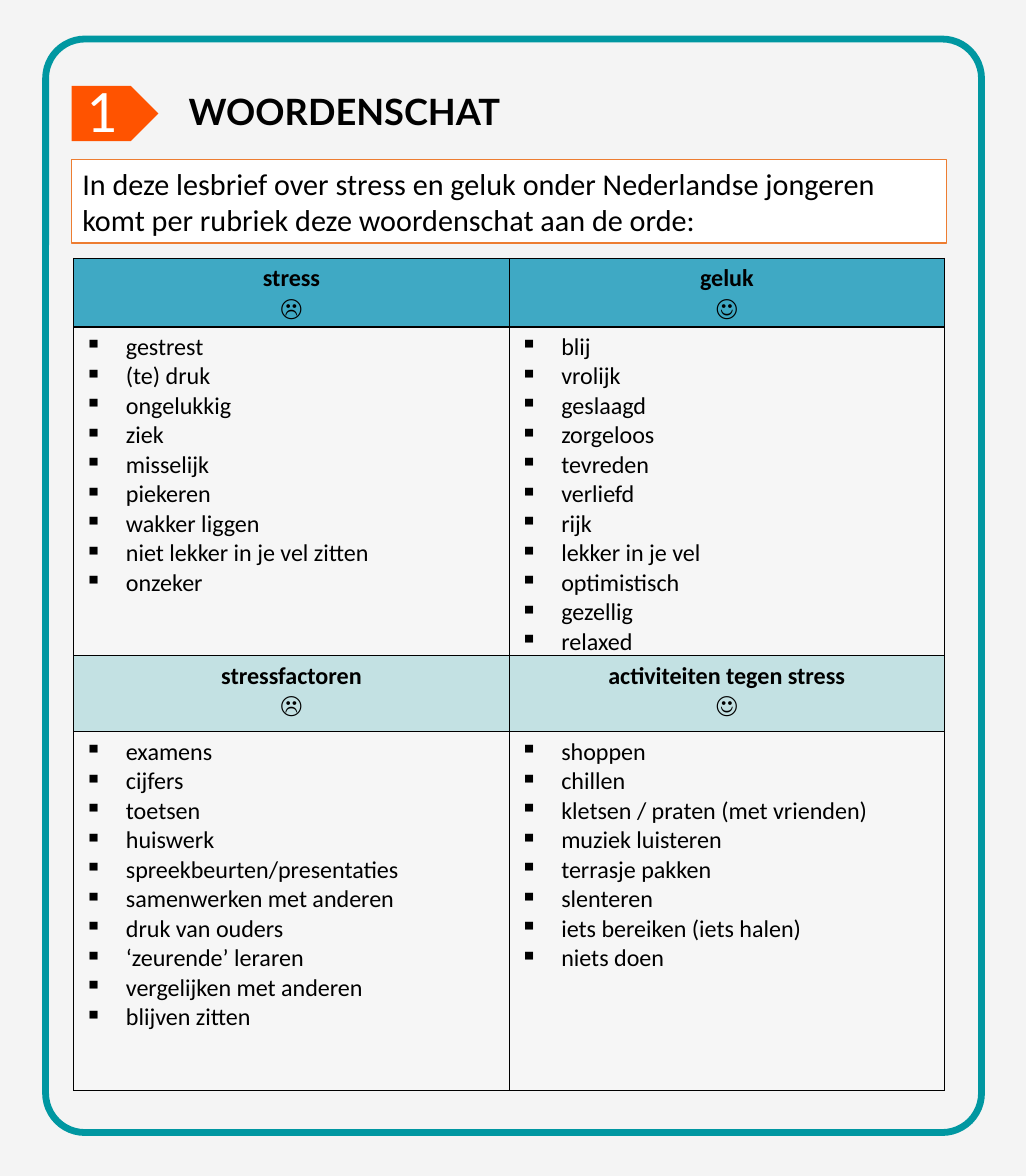
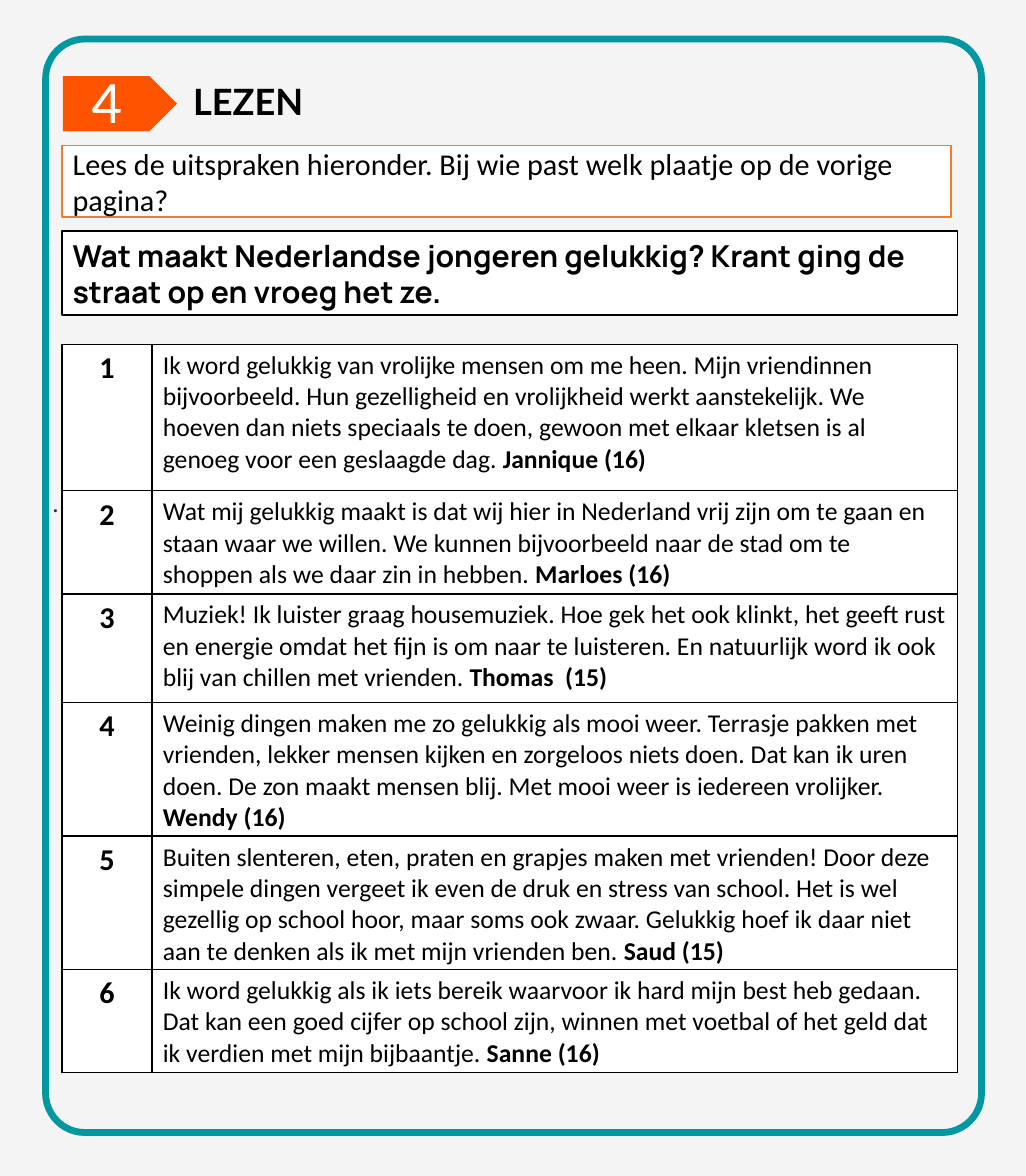
from lxml import etree
from pptx import Presentation
from pptx.dml.color import RGBColor
from pptx.enum import shapes, text
from pptx.oxml import ns
from pptx.util import Inches, Pt

BACKGROUND = RGBColor(0xF4, 0xF4, 0xF4)
TEAL = RGBColor(0x00, 0x97, 0xA1)
BLUE = RGBColor(0x3F, 0xA9, 0xC4)
ORANGE = RGBColor(0xFF, 0x53, 0x00)
OUTLINE = RGBColor(0xED, 0x7D, 0x31)
WHITE = RGBColor(0xFF, 0xFF, 0xFF)
BLACK = RGBColor(0, 0, 0)
DARK = RGBColor(0x28, 0x28, 0x28)

BODY_FONT, TITLE_FONT, QUOTE_FONT, DOT_FONT = "Calibri", "Lato", "Manrope", "Karla"

SAD, HAPPY = "☹", "☺"
VOCABULARY = [
    ("stress", SAD, [
        "gestrest", "(te) druk", "ongelukkig", "ziek", "misselijk", "piekeren",
        "wakker liggen", "niet lekker in je vel zitten", "onzeker"]),
    ("geluk", HAPPY, [
        "blij", "vrolijk", "geslaagd", "zorgeloos", "tevreden", "verliefd", "rijk",
        "lekker in je vel", "optimistisch", "gezellig", "relaxed"]),
    ("stressfactoren", SAD, [
        "examens", "cijfers", "toetsen", "huiswerk", "spreekbeurten/presentaties",
        "samenwerken met anderen", "druk van ouders", "‘zeurende’ leraren",
        "vergelijken met anderen", "blijven zitten"]),
    ("activiteiten tegen stress", HAPPY, [
        "shoppen", "chillen", "kletsen / praten (met vrienden)", "muziek luisteren",
        "terrasje pakken", "slenteren", "iets bereiken (iets halen)", "niets doen"]),
]

STATEMENTS = [
    ("Ik word gelukkig van vrolijke mensen om me heen. Mijn vriendinnen bijvoorbeeld. "
     "Hun gezelligheid en vrolijkheid werkt aanstekelijk. We hoeven dan niets speciaals "
     "te doen, gewoon met elkaar kletsen is al genoeg voor een geslaagde dag. ",
     "Jannique (16)"),
    ("Wat mij gelukkig maakt is dat wij hier in Nederland vrij zijn om te gaan en staan "
     "waar we willen. We kunnen bijvoorbeeld naar de stad om te shoppen als we daar zin "
     "in hebben. ", "Marloes (16)"),
    ("Muziek! Ik luister graag housemuziek. Hoe gek het ook klinkt, het geeft rust en "
     "energie omdat het fijn is om naar te luisteren. En natuurlijk word ik ook blij van "
     "chillen met vrienden. ", "Thomas  (15)"),
    ("Weinig dingen maken me zo gelukkig als mooi weer. Terrasje pakken met vrienden, "
     "lekker mensen kijken en zorgeloos niets doen. Dat kan ik uren doen. De zon maakt "
     "mensen blij. Met mooi weer is iedereen vrolijker. ", "Wendy (16)"),
    ("Buiten slenteren, eten, praten en grapjes maken met vrienden! Door deze simpele "
     "dingen vergeet ik even de druk en stress van school. Het is wel gezellig op school "
     "hoor, maar soms ook zwaar. Gelukkig hoef ik daar niet aan te denken als ik met mijn "
     "vrienden ben. ", "Saud (15)"),
    ("Ik word gelukkig als ik iets bereik waarvoor ik hard mijn best heb gedaan. Dat kan "
     "een goed cijfer op school zijn, winnen met voetbal of het geld dat ik verdien met "
     "mijn bijbaantje. ", "Sanne (16)"),
]


def inches(box):
    return [Inches(length) for length in box]


def style(paragraph, size, color=BLACK, font=BODY_FONT, bold=False):
    paragraph.font.size = Pt(size)
    paragraph.font.color.rgb = color
    paragraph.font.name = font
    paragraph.font.bold = bold


def add_label(slide, box, words, size, **look):
    frame = slide.shapes.add_textbox(*inches(box)).text_frame
    frame.word_wrap = True
    paragraph = frame.paragraphs[0]
    paragraph.text = words
    style(paragraph, size, **look)
    return paragraph


def add_block(slide, kind, box, fill=None, line=None, width=1):
    block = slide.shapes.add_shape(kind, *inches(box))
    block.shadow.inherit = False
    if fill is None:
        block.fill.background()
    else:
        block.fill.solid()
        block.fill.fore_color.rgb = fill
    if line is None:
        block.line.fill.background()
    else:
        block.line.color.rgb = line
        block.line.width = Pt(width)
    return block


def add_page(deck):
    slide = deck.slides.add_slide(deck.slide_layouts[6])
    slide.background.fill.solid()
    slide.background.fill.fore_color.rgb = BACKGROUND
    border = add_block(slide, shapes.MSO_SHAPE.ROUNDED_RECTANGLE,
                       (0.42, 0.36, 8.62, 10.07), line=TEAL, width=4.5)
    border.adjustments[0] = 0.042
    return slide


def add_heading(slide, left, top, badge_width, number_inset, title_left, number, title):
    add_block(slide, shapes.MSO_SHAPE.PENTAGON, (left, top, badge_width, 0.51), ORANGE)
    add_label(slide, (left + number_inset, top - 0.17, 0.52, 0.77), number, 40, color=WHITE)
    add_label(slide, (title_left, top - 0.02, 7.2, 0.5), title, 24,
              font=TITLE_FONT, bold=True)


def add_note(slide, box, words, line=OUTLINE, **look):
    note = add_block(slide, shapes.MSO_SHAPE.RECTANGLE, box, WHITE, line)
    frame = note.text_frame
    frame.word_wrap = True
    frame.vertical_anchor = text.MSO_ANCHOR.MIDDLE
    paragraph = frame.paragraphs[0]
    paragraph.text = words
    paragraph.alignment = text.PP_ALIGN.LEFT
    style(paragraph, 20, **look)


def add_grid(slide, left, top, columns, rows):
    table = slide.shapes.add_table(
        len(rows), len(columns), *inches((left, top, sum(columns), sum(rows)))).table
    table.first_row = table.horz_banding = False
    for column, width in zip(table.columns, columns):
        column.width = Inches(width)
    for row, height in zip(table.rows, rows):
        row.height = Inches(height)
    return table


def format_cell(cell, fill, opacity=100, bottom_margin=0.0, **borders):
    cell.margin_top = Inches(0.05)
    cell.margin_bottom = Inches(bottom_margin)
    cell.fill.solid()
    cell.fill.fore_color.rgb = fill
    properties = cell._tc.get_or_add_tcPr()
    if opacity < 100:
        color = properties.find(".//" + ns.qn("a:srgbClr"))
        etree.SubElement(color, ns.qn("a:alpha"), val=str(opacity * 1000))
    for position, side in enumerate("LRTB"):
        edge = etree.Element(ns.qn("a:ln" + side), w=str(Pt(borders.get(side, 1))))
        paint = etree.SubElement(edge, ns.qn("a:solidFill"))
        etree.SubElement(paint, ns.qn("a:srgbClr"), val=str(BLACK))
        properties.insert(position, edge)


def fill_cell(cell, lines, size, bold=False, centered=False, bullet=None):
    frame = cell.text_frame
    for index, words in enumerate(lines):
        paragraph = frame.add_paragraph() if index else frame.paragraphs[0]
        paragraph.text = words
        style(paragraph, size, bold=bold)
        if centered:
            paragraph.alignment = text.PP_ALIGN.CENTER
        if bullet:
            properties = paragraph._p.get_or_add_pPr()
            properties.set("marL", str(Inches(0.38)))
            properties.set("indent", str(-Inches(0.38)))
            mark = etree.Element(ns.qn("a:buChar"), char=bullet)
            properties.insert(0, mark)


def add_vocabulary(slide, left, top):
    table = add_grid(slide, left, top, [4.01, 4.01], [0.63, 3.03, 0.7, 3.3])
    for index, (topic, mood, words) in enumerate(VOCABULARY):
        band, column = divmod(index, 2)
        header, listing = table.cell(2 * band, column), table.cell(2 * band + 1, column)
        fill_cell(header, [topic, mood], 16, bold=True, centered=True)
        fill_cell(listing, words, 16, bullet="▪")
        if band == 0:
            format_cell(header, BLUE, B=2)
            format_cell(listing, WHITE, 20, T=2)
        else:
            format_cell(header, TEAL, 20)
            format_cell(listing, WHITE, 20)


def add_statements(slide, left, top):
    table = add_grid(slide, left, top, [0.83, 7.42], [1.35, 0.95, 1, 1.23, 1.23, 0.95])
    for row, (statement, speaker) in enumerate(STATEMENTS):
        number, quote = table.cell(row, 0), table.cell(row, 1)
        fill_cell(number, [str(row + 1)], 20, bold=True, centered=True)
        fill_cell(quote, [statement], 17)
        signature = quote.text_frame.paragraphs[0].add_run()
        signature.text = speaker
        signature.font.bold = True
        for cell in (number, quote):
            format_cell(cell, WHITE, bottom_margin=0.03)


def build_vocabulary_slide(deck):
    slide = add_page(deck)
    add_heading(slide, 0.66, 0.79, 0.8, 0.04, 1.64, "1", "WOORDENSCHAT")
    add_note(slide, (0.66, 1.47, 8.06, 0.77),
             "In deze lesbrief over stress en geluk onder Nederlandse jongeren "
             "komt per rubriek deze woordenschat aan de orde:")
    add_vocabulary(slide, 0.68, 2.38)


def build_reading_slide(deck):
    slide = add_page(deck)
    add_heading(slide, 0.58, 0.7, 1.05, 0.16, 1.68, "4", "LEZEN")
    add_note(slide, (0.57, 1.34, 8.19, 0.66),
             "Lees de uitspraken hieronder. Bij wie past welk plaatje op de vorige pagina?")
    add_note(slide, (0.57, 2.13, 8.25, 0.77),
             "Wat maakt Nederlandse jongeren gelukkig? Krant ging de straat op en vroeg het ze.",
             line=BLACK, font=QUOTE_FONT, bold=True)
    dot = add_label(slide, (0.39, 4.4, 8.01, 0.41), ".", 18, color=DARK, font=DOT_FONT)
    dot.line_spacing = 1.07
    add_statements(slide, 0.57, 3.17)


def main():
    deck = Presentation()
    deck.slide_width, deck.slide_height = Inches(9.45), Inches(10.83)
    build_vocabulary_slide(deck)
    build_reading_slide(deck)
    deck.save("out.pptx")


if __name__ == "__main__":
    main()
